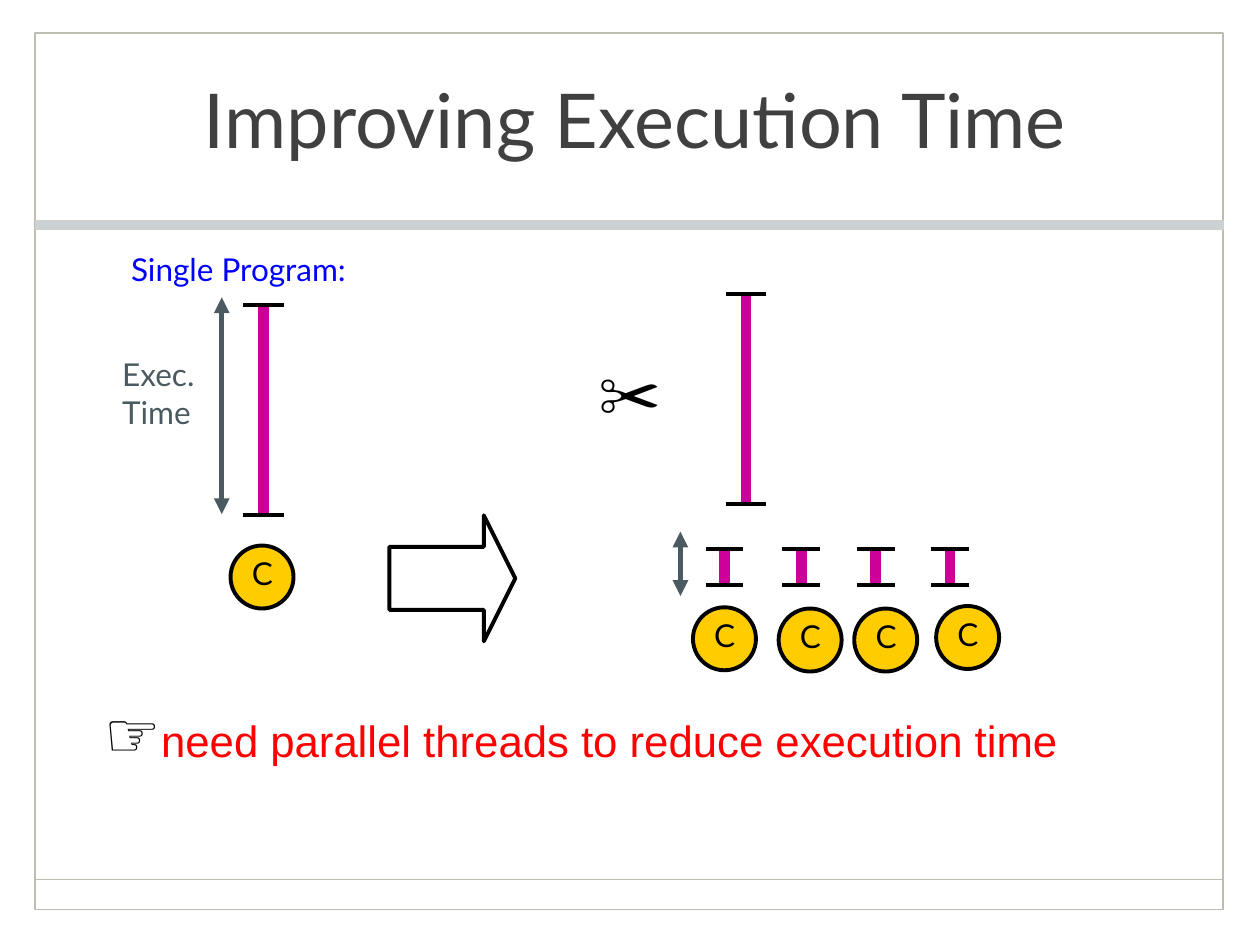
from dataclasses import dataclass

from lxml import etree
from pptx import Presentation
from pptx import util as u
from pptx.dml.color import RGBColor
from pptx.enum import shapes, text
from pptx.oxml.ns import qn


@dataclass(frozen=True)
class Theme:
    font: str = "Lato"
    plain_font: str = "Arial"
    title_size: float = 43.2
    symbol_size: float = 36
    message_size: float = 25
    label_size: float = 18
    title: str = "404040"
    ink: str = "000000"
    frame: str = "BEBDB2"
    band: str = "CBD2D5"
    band_edge: str = "D1D0C8"
    core: str = "FFCC00"
    work: str = "CC0099"
    time: str = "4B5A60"
    heading: str = "0000FF"
    message: str = "FF0000"


class SlideBuilder:
    def __init__(self, slide, theme):
        self.slide = slide
        self.theme = theme

    def style(self, run, size, color, font=None):
        run.font.size = u.Pt(size)
        run.font.name = font or self.theme.font
        run.font.color.rgb = RGBColor.from_string(color)

    def title(self, wording, left, top, width, height):
        shape = self.slide.shapes.title
        shape.left, shape.top = u.Inches(left), u.Inches(top)
        shape.width, shape.height = u.Inches(width), u.Inches(height)
        frame = shape.text_frame
        frame.text = wording
        frame.auto_size = text.MSO_AUTO_SIZE.NONE
        frame.vertical_anchor = text.MSO_ANCHOR.MIDDLE
        paragraph = frame.paragraphs[0]
        paragraph.alignment = text.PP_ALIGN.CENTER
        self.style(paragraph.runs[0], self.theme.title_size, self.theme.title)

    def shape(self, kind, left, top, width, height, line, weight, fill=None, parent=None):
        shape = (parent or self.slide).shapes.add_shape(
            kind, u.Inches(left), u.Inches(top), u.Inches(width), u.Inches(height))
        shape.shadow.inherit = False
        if fill:
            shape.fill.solid()
            shape.fill.fore_color.rgb = RGBColor.from_string(fill)
        else:
            shape.fill.background()
        shape.line.color.rgb = RGBColor.from_string(line)
        shape.line.width = u.Pt(weight)
        return shape

    def line(self, x1, y1, x2, y2, color, weight, arrows=False):
        connector = self.slide.shapes.add_connector(
            shapes.MSO_CONNECTOR.STRAIGHT,
            u.Inches(x1), u.Inches(y1), u.Inches(x2), u.Inches(y2))
        connector.line.color.rgb = RGBColor.from_string(color)
        connector.line.width = u.Pt(weight)
        properties = connector._element.spPr
        if arrows:
            outline = properties.find(qn("a:ln"))
            for end in ("a:headEnd", "a:tailEnd"):
                etree.SubElement(outline, qn(end), type="triangle")
        etree.SubElement(properties, qn("a:effectLst"))

    def label(self, wording, left, top, width, height, size, color,
              inset=(0.09, 0.04), parent=None):
        box = (parent or self.slide).shapes.add_textbox(
            u.Inches(left), u.Inches(top), u.Inches(width), u.Inches(height))
        frame = box.text_frame
        frame.text = wording
        frame.word_wrap = False
        frame.auto_size = text.MSO_AUTO_SIZE.SHAPE_TO_FIT_TEXT
        frame.margin_left = frame.margin_right = u.Inches(inset[0])
        frame.margin_top = frame.margin_bottom = u.Inches(inset[1])
        for paragraph in frame.paragraphs:
            for run in paragraph.runs:
                self.style(run, size, color)
        return frame

    def work_bar(self, center, top, bottom, cap):
        """A span of work, closed by a cap at each end."""
        self.line(center, top, center, bottom, self.theme.work, 6)
        for y in (top, bottom):
            self.line(center - cap / 2, y, center + cap / 2, y, self.theme.ink, 2.25)

    def core(self, left, top):
        """A processor core: a circle with its letter."""
        group = self.slide.shapes.add_group_shape()
        self.shape(shapes.MSO_SHAPE.OVAL, left, top, 0.5, 0.5,
                   self.theme.ink, 2.25, self.theme.core, group)
        self.label("C", left + 0.07, top + 0.02, 0.38, 0.4, self.theme.label_size,
                   self.theme.ink, (0.1, 0.05), group)

    def time_arrow(self, x, top, bottom):
        self.line(x, top, x, bottom, self.theme.time, 3, arrows=True)


def main():
    presentation = Presentation()
    presentation.slide_width, presentation.slide_height = u.Inches(10), u.Inches(7.5)
    slide = presentation.slides.add_slide(presentation.slide_layouts[5])
    theme = Theme()
    builder = SlideBuilder(slide, theme)

    # Page frame, footer rule and title band
    rectangle = shapes.MSO_SHAPE.RECTANGLE
    builder.shape(rectangle, 0.28, 0.26, 9.43, 6.96, theme.frame, 1)
    builder.line(0.28, 6.98, 9.71, 6.98, theme.frame, 1)
    builder.shape(rectangle, 0.28, 1.75, 9.43, 0.07, theme.band_edge, 0.25, theme.band)
    builder.title("Improving Execution Time", 0.75, 0.69, 8.58, 0.5)

    # Single program on one core
    builder.label("Single Program:", 0.95, 1.94, 1.91, 0.39, theme.label_size, theme.heading)
    builder.label("Exec.\nTime", 0.88, 2.78, 0.77, 0.7, theme.label_size, theme.time)
    builder.time_arrow(1.76, 2.36, 4.08)
    builder.work_bar(2.09, 2.42, 4.09, 0.32)
    builder.core(1.83, 4.33)

    # Step from one core to many
    arrow = builder.shape(shapes.MSO_SHAPE.RIGHT_ARROW, 3.09, 4.09, 1, 1, theme.ink, 2.25)
    arrow.adjustments[1] = 0.25

    # The program to be cut up
    builder.label("✂", 4.66, 2.78, 0.76, 0.7, theme.symbol_size, theme.ink)
    builder.work_bar(5.92, 2.33, 4, 0.32)

    # Pieces running in parallel
    builder.time_arrow(5.4, 4.22, 4.73)
    for center in (5.75, 6.36, 6.95, 7.54):
        builder.work_bar(center, 4.36, 4.64, 0.3)
    for left, top in ((5.5, 4.82), (6.18, 4.83), (6.78, 4.83), (7.43, 4.81)):
        builder.core(left, top)

    # Conclusion
    message = builder.label("☞", 0.74, 5.46, 7.85, 0.7, theme.symbol_size, theme.ink)
    message.vertical_anchor = text.MSO_ANCHOR.MIDDLE
    run = message.paragraphs[0].add_run()
    run.text = "need parallel threads to reduce execution time"
    builder.style(run, theme.message_size, theme.message, theme.plain_font)

    presentation.save("out.pptx")


if __name__ == "__main__":
    main()
